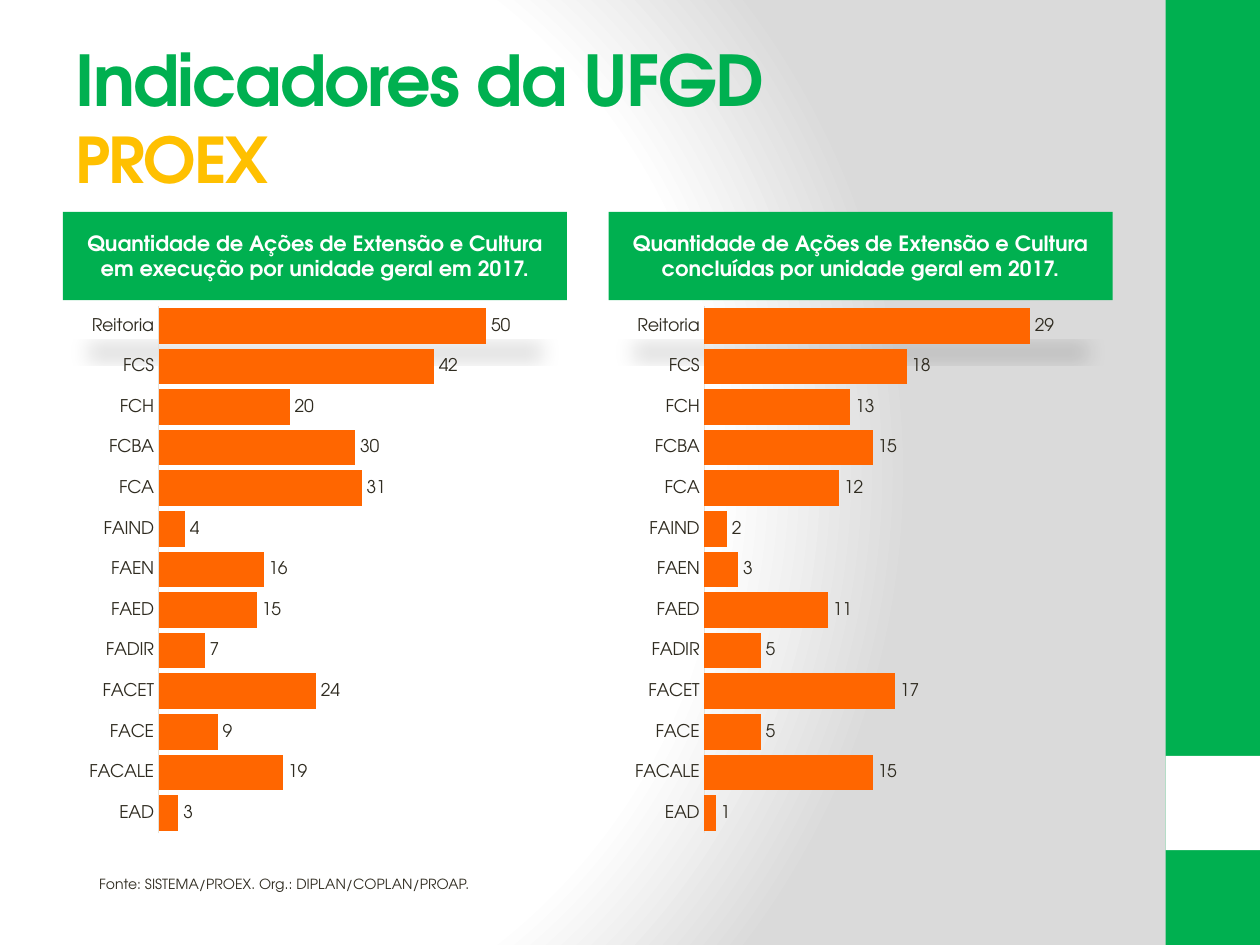
import lxml.etree
import pptx
import pptx.chart.data
import pptx.dml.color
import pptx.enum.chart
import pptx.enum.shapes
import pptx.enum.text
import pptx.oxml
import pptx.oxml.ns
import pptx.util

Cm = pptx.util.Cm
Pt = pptx.util.Pt
FONT = "TeX Gyre Adventor"
COLORS = {
    "green": "00B050",
    "yellow": "FFC000",
    "orange": "FF6600",
    "white": "FFFFFF",
    "gray": "DADADA",
    "text": "2F2B20",
    "axis": "E5E2D9",
}
NAMESPACE = pptx.oxml.ns.nsdecls("a")


def style_font(font, size, color, bold=False):
    font.name = FONT
    font.size = Pt(size)
    font.bold = bold
    font.color.rgb = pptx.dml.color.RGBColor.from_string(COLORS[color])


def add_block(left, top, width, height, color):
    shape = slide.shapes.add_shape(
        pptx.enum.shapes.MSO_SHAPE.RECTANGLE, Cm(left), Cm(top), Cm(width), Cm(height)
    )
    shape.shadow.inherit = False
    shape.fill.solid()
    shape.fill.fore_color.rgb = pptx.dml.color.RGBColor.from_string(COLORS[color])
    shape.line.fill.background()
    return shape


presentation = pptx.Presentation()
presentation.slide_width = Cm(25.4)
presentation.slide_height = Cm(19.05)
slide = presentation.slides.add_slide(presentation.slide_layouts[6])

slide.background.fill.gradient()
gradient = slide.element.find(".//" + pptx.oxml.ns.qn("a:gradFill"))
for child in list(gradient):
    gradient.remove(child)
stops = lxml.etree.SubElement(gradient, pptx.oxml.ns.qn("a:gsLst"))
for position, color in ((0, "white"), (75, "white"), (100, "gray")):
    stops.append(pptx.oxml.parse_xml(
        f'<a:gs {NAMESPACE} pos="{position * 1000}"><a:srgbClr val="{COLORS[color]}"/></a:gs>'
    ))
gradient.append(pptx.oxml.parse_xml(
    f'<a:path {NAMESPACE} path="circle">'
    '<a:fillToRect l="20000" t="50000" r="100000" b="50000"/></a:path>'
))

add_block(23.5, 0, 1.9, 19.05, "green")
add_block(23.5, 15.24, 1.9, 1.9, "white")

title = slide.shapes.add_textbox(Cm(1.27), Cm(0.76), Cm(21.16), Cm(3.18))
title.text_frame.word_wrap = True
title.text_frame.vertical_anchor = pptx.enum.text.MSO_ANCHOR.MIDDLE
paragraph = title.text_frame.paragraphs[0]
for index, (text, size, color) in enumerate(
    (("Indicadores da UFGD", 40, "green"), ("PROEX", 36, "yellow"))
):
    if index:
        paragraph.add_line_break()
    run = paragraph.add_run()
    run.text = text
    style_font(run.font, size, color, True)
    run.font._element.set("spc", "-100")

source = slide.shapes.add_textbox(Cm(1.75), Cm(17.53), Cm(8.61), Cm(0.61))
source.text_frame.word_wrap = True
run = source.text_frame.paragraphs[0].add_run()
run.text = "Fonte: SISTEMA/PROEX. Org.: DIPLAN/COPLAN/PROAP."
style_font(run.font, 8, "text")

units = ["EAD", "FACALE", "FACE", "FACET", "FADIR", "FAED", "FAEN",
         "FAIND", "FCA", "FCBA", "FCH", "FCS", "Reitoria"]
panels = [
    (1.27, "em execução", 60, [3, 19, 9, 24, 7, 15, 16, 4, 31, 30, 20, 42, 50]),
    (12.27, "concluídas", 35, [1, 15, 5, 17, 5, 11, 3, 2, 12, 15, 13, 18, 29]),
]
for left, status, maximum, values in panels:
    heading = add_block(left, 4.27, 10.16, 1.78, "green")
    effects = heading._element.spPr.find(pptx.oxml.ns.qn("a:effectLst"))
    effects.append(pptx.oxml.parse_xml(
        f'<a:outerShdw {NAMESPACE} blurRad="{Pt(12)}" dist="{Pt(25)}" dir="5400000"'
        ' sx="90000" sy="-19000" rotWithShape="0">'
        '<a:srgbClr val="000000"><a:alpha val="15000"/></a:srgbClr></a:outerShdw>'
    ))
    heading.text_frame.word_wrap = True
    heading.text_frame.vertical_anchor = pptx.enum.text.MSO_ANCHOR.MIDDLE
    paragraph = heading.text_frame.paragraphs[0]
    paragraph.alignment = pptx.enum.text.PP_ALIGN.CENTER
    run = paragraph.add_run()
    run.text = f"Quantidade de Ações de Extensão e Cultura {status} por unidade geral em 2017."
    style_font(run.font, 12, "white", True)

    data = pptx.chart.data.CategoryChartData()
    data.categories = units
    data.add_series("Series 1", values)
    chart = slide.shapes.add_chart(
        pptx.enum.chart.XL_CHART_TYPE.BAR_CLUSTERED,
        Cm(left), Cm(6.05), Cm(10.16), Cm(10.97), data,
    ).chart
    chart.has_legend = False
    chart.has_title = False
    style_font(chart.font, 10, "text")
    chart.font.name = "Calibri"

    category_axis = chart.category_axis
    category_axis.major_tick_mark = pptx.enum.chart.XL_TICK_MARK.NONE
    category_axis.has_major_gridlines = False
    category_axis.format.line.width = Pt(0.75)
    category_axis.format.line.color.rgb = pptx.dml.color.RGBColor.from_string(COLORS["axis"])
    style_font(category_axis.tick_labels.font, 10, "text")
    value_axis = chart.value_axis
    value_axis.minimum_scale = 0
    value_axis.maximum_scale = maximum
    value_axis.has_major_gridlines = False
    value_axis.visible = False

    plot = chart.plots[0]
    plot.gap_width = 14
    plot.vary_by_categories = False
    series = plot.series[0]
    series.format.fill.solid()
    series.format.fill.fore_color.rgb = pptx.dml.color.RGBColor.from_string(COLORS["orange"])
    labels = series.data_labels
    labels.show_value = True
    labels.position = pptx.enum.chart.XL_LABEL_POSITION.OUTSIDE_END
    style_font(labels.font, 10, "text")

    plot_area = chart._chartSpace.chart.plotArea
    for old_layout in plot_area.findall(pptx.oxml.ns.qn("c:layout")):
        plot_area.remove(old_layout)
    layout = lxml.etree.Element(pptx.oxml.ns.qn("c:layout"))
    manual = lxml.etree.SubElement(layout, pptx.oxml.ns.qn("c:manualLayout"))
    for tag, value in (("layoutTarget", "inner"), ("xMode", "edge"), ("yMode", "edge"),
                       ("x", 0.19), ("y", 0.01), ("w", 0.78), ("h", 0.97)):
        lxml.etree.SubElement(manual, pptx.oxml.ns.qn(f"c:{tag}")).set("val", str(value))
    plot_area.insert(0, layout)

presentation.save("out.pptx")
